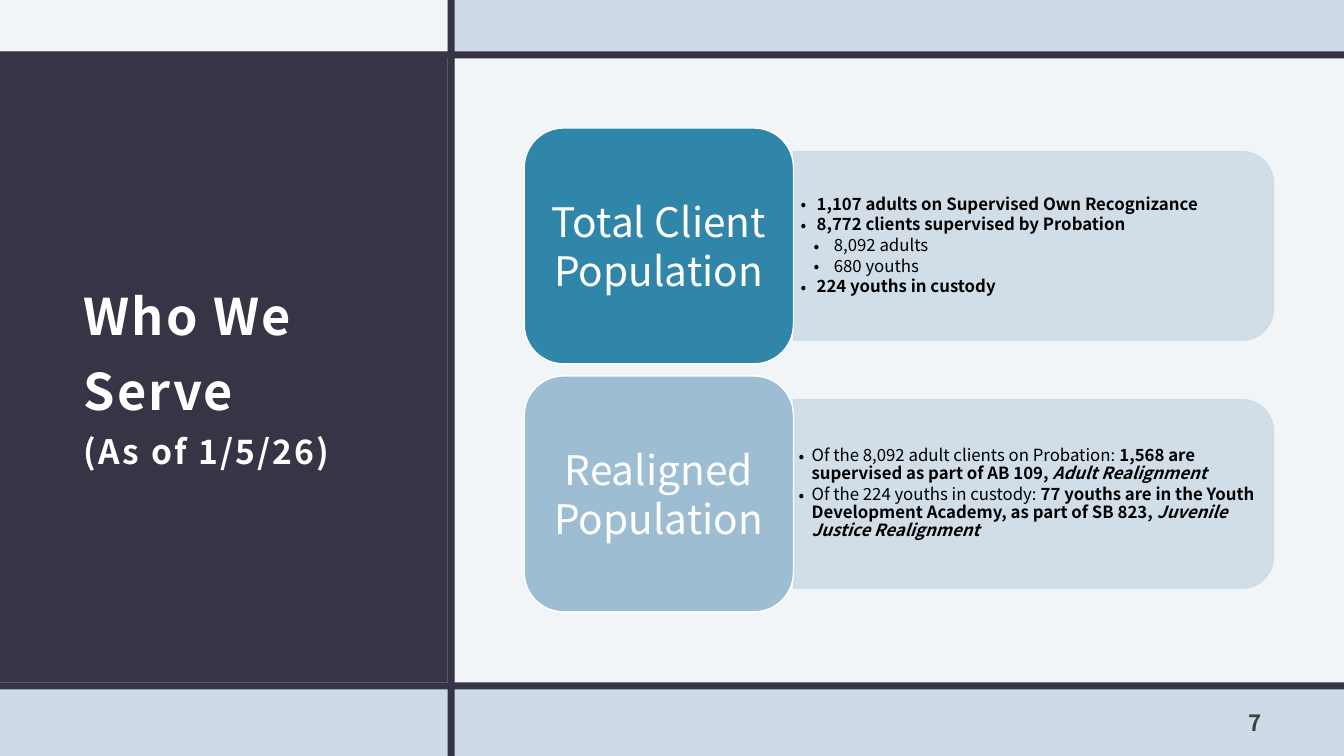
from pptx import Presentation
from pptx import util as u
from pptx.dml.color import RGBColor
from pptx.enum import shapes, text
from pptx.oxml import parse_xml
from pptx.oxml.ns import nsdecls

FONT = "Noto Sans CJK JP"
DARK, PALE, WHITE, PANEL = "373545", "CEDBE6", "FFFFFF", "CEDCE7"
SLIDE_W, SLIDE_H = 13.33, 7.5
SIDE_W, BAR, TOP_BAR, LOW_BAR = 4.44, 0.07, 0.51, 6.77
CARD_X, CARD_W, CARD_H, CARD_TOP, CARD_PITCH = 5.2, 7.43, 2.34, 1.27, 2.46
LABEL_W = 2.67

B, I, N = {"bold": True}, {"bold": True, "italic": True}, {}
CARDS = [
    {
        "label": ("Total Client", "Population"), "fill": "2F86A9",
        "inset": 0.07, "indents": ((0.16, 0.16), (0.33, 0.2)),
        "items": [
            (0, [("1,107 adults on Supervised Own Recognizance", B)]),
            (0, [("8,772 clients supervised by Probation", B)]),
            (1, [("8,092 adults", N)]),
            (1, [("680 youths", N)]),
            (0, [("224 youths in custody", B)]),
        ],
    },
    {
        "label": ("Realigned", "Population"), "fill": "9CBDD2",
        "inset": 0.05, "indents": ((0.13, 0.13),),
        "items": [
            (0, [("Of the 8,092 adult clients on Probation: ", N),
                 ("1,568 are supervised as part of AB 109, ", B),
                 ("Adult Realignment", I)]),
            (0, [("Of the 224 youths in custody: ", N),
                 ("77 youths are in the Youth Development Academy, as part of SB 823, ", B),
                 ("Juvenile Justice Realignment", I)]),
        ],
    },
]


def colour(value):
    """Turn a hex string into a colour."""
    return RGBColor.from_string(value)


def add_span(para, content, size=12, fill="000000", bold=False, italic=False, spacing=0):
    """Append formatted text to a paragraph."""
    span = para.add_run()
    span.text = content
    font = span.font
    font.name, font.size, font.bold, font.italic = FONT, u.Pt(size), bold, italic
    font.color.rgb = colour(fill)
    if spacing:
        span._r.get_or_add_rPr().set("spc", str(round(spacing * 100)))


def set_frame(box, anchor, left, top, right, bottom):
    """Set wrapping, anchor and margins of a text frame."""
    frame = box.text_frame
    frame.word_wrap = True
    frame.auto_size = text.MSO_AUTO_SIZE.NONE
    frame.vertical_anchor = anchor
    frame.margin_left, frame.margin_top = u.Inches(left), u.Inches(top)
    frame.margin_right, frame.margin_bottom = u.Inches(right), u.Inches(bottom)
    return frame


def move(box, left, top, width, height):
    """Place an object in inches."""
    box.left, box.top = u.Inches(left), u.Inches(top)
    box.width, box.height = u.Inches(width), u.Inches(height)


def bring_forward(page, box):
    """Put an object in front of everything drawn so far."""
    page.shapes._spTree.append(box._element)


def add_block(page, left, top, width, height, fill, alpha=100, line=None,
              kind=shapes.MSO_SHAPE.RECTANGLE):
    """Draw a filled preset shape."""
    block = page.shapes.add_shape(kind, *map(u.Inches, (left, top, width, height)))
    block.shadow.inherit = False
    block.fill.solid()
    block.fill.fore_color.rgb = colour(fill)
    if alpha < 100:
        tint = block.fill._xPr.find(".//{*}srgbClr")
        tint.append(parse_xml(f'<a:alpha {nsdecls("a")} val="{alpha * 1000}"/>'))
    if line:
        block.line.color.rgb = colour(line)
        block.line.width = u.Pt(1)
    else:
        block.line.fill.background()
    return block


def draw_backdrop(page):
    """Draw the side panel, light areas and dividing bars."""
    page.background.fill.solid()
    page.background.fill.fore_color.rgb = colour(PALE)
    add_block(page, 0, TOP_BAR, SIDE_W, LOW_BAR - TOP_BAR, DARK)
    add_block(page, 0, 0, SIDE_W, TOP_BAR + 0.04, WHITE, alpha=75)
    content_x = SIDE_W + BAR
    add_block(page, content_x, TOP_BAR + BAR, SLIDE_W - content_x, 6.22, WHITE, alpha=75)
    for top in (LOW_BAR, TOP_BAR):
        add_block(page, 0, top, SLIDE_W, BAR, DARK)
    add_block(page, SIDE_W, 0, BAR, SLIDE_H, DARK)


def fill_title(page, left, top, width, height):
    """Write the title and its date line."""
    title = page.shapes.title
    move(title, left, top, width, height)
    bring_forward(page, title)
    frame = set_frame(title, text.MSO_ANCHOR.MIDDLE, 0.12, 0.12, 0.12, 0.1)
    para = frame.paragraphs[0]
    para.alignment = text.PP_ALIGN.LEFT
    para.line_spacing = 1.25
    add_span(para, "Who We Serve", size=36, fill=WHITE, bold=True, spacing=1.5)
    para.add_line_break()
    add_span(para, "(As of 1/5/26)", size=24, fill=WHITE, bold=True, spacing=1.5)


def fill_list(page, body, card, left, top, width, height):
    """Write a card's bullets into a body placeholder."""
    move(body, left, top, width, height)
    bring_forward(page, body)
    inset = card["inset"]
    frame = set_frame(body, text.MSO_ANCHOR.MIDDLE, inset, 0.03, inset, 0.03)
    for index, (level, spans) in enumerate(card["items"]):
        para = frame.add_paragraph() if index else frame.paragraphs[0]
        para.level = level
        margin, hanging = card["indents"][level]
        props = para._p.get_or_add_pPr()
        props.set("marL", str(u.Inches(margin)))
        props.set("indent", str(-u.Inches(hanging)))
        props.append(parse_xml(f'<a:buFont {nsdecls("a")} typeface="{FONT}"/>'))
        props.append(parse_xml(f'<a:buChar {nsdecls("a")} char="•"/>'))
        para.line_spacing = 0.9
        para.space_before, para.space_after = u.Pt(0), u.Pt(1.8)
        for content, style in spans:
            add_span(para, content, **style)


def draw_card(page, body, card, left, top, width, height):
    """Draw a label tile with its panel of bullets."""
    panel_x, panel_h = left + LABEL_W, height * 0.8
    panel_w = width - LABEL_W
    panel_y = top + (height - panel_h) / 2
    shift = (panel_w - panel_h) / 2
    panel = add_block(page, panel_x + shift, panel_y - shift, panel_h, panel_w, PANEL,
                      alpha=90, line=PANEL, kind=shapes.MSO_SHAPE.ROUND_2_SAME_RECTANGLE)
    panel.rotation = 90
    fill_list(page, body, card, panel_x, panel_y + 0.09, panel_w - 0.09, panel_h - 0.18)
    tile = add_block(page, left, top, LABEL_W, height, card["fill"], line=WHITE,
                     kind=shapes.MSO_SHAPE.ROUNDED_RECTANGLE)
    frame = set_frame(tile, text.MSO_ANCHOR.MIDDLE, 0.12, 0.06, 0.12, 0.06)
    for index, word in enumerate(card["label"]):
        para = frame.add_paragraph() if index else frame.paragraphs[0]
        para.alignment = text.PP_ALIGN.CENTER
        add_span(para, word, size=29, fill=WHITE)


def add_page_number(page, left, top, width, height):
    """Write the page number."""
    box = page.shapes.add_textbox(*map(u.Inches, (left, top, width, height)))
    frame = set_frame(box, text.MSO_ANCHOR.BOTTOM, 0.12, 0.12, 0.12, 0.1)
    para = frame.paragraphs[0]
    para.alignment = text.PP_ALIGN.RIGHT
    para.space_after = u.Pt(6)
    add_span(para, "7", size=16, fill="404040", bold=True, spacing=1.5)


def main():
    """Build and save the deck."""
    deck = Presentation()
    deck.slide_width, deck.slide_height = u.Inches(SLIDE_W), u.Inches(SLIDE_H)
    page = deck.slides.add_slide(deck.slide_layouts[3])
    bodies = [page.placeholders[1], page.placeholders[2]]
    draw_backdrop(page)
    fill_title(page, 0.71, 1.31, 3.41, 4.71)
    for row, (body, card) in enumerate(zip(bodies, CARDS)):
        draw_card(page, body, card, CARD_X, CARD_TOP + row * CARD_PITCH, CARD_W, CARD_H)
    add_page_number(page, 11.56, 6.9, 1.07, 0.5)
    deck.save("out.pptx")


if __name__ == "__main__":
    main()
